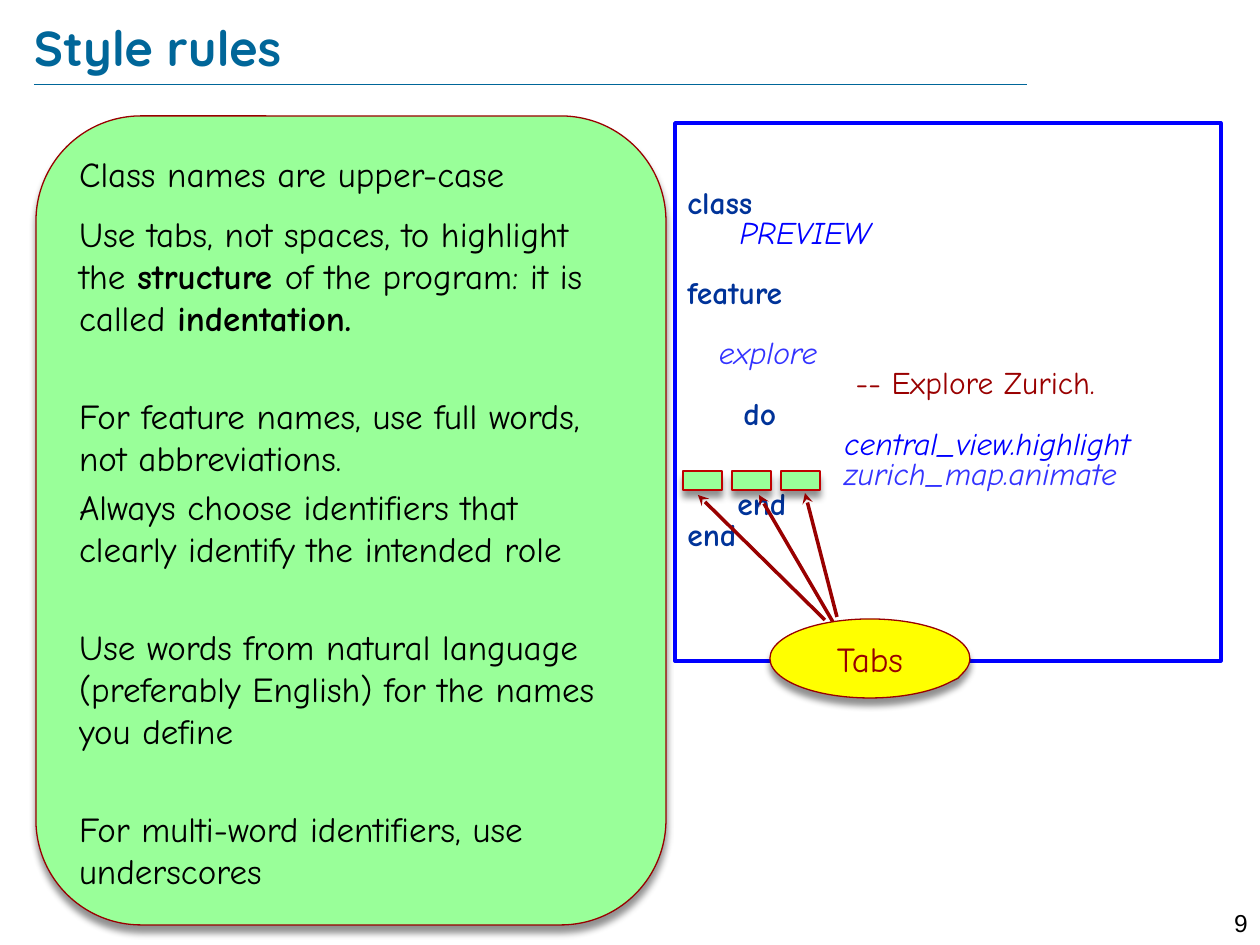
from lxml import etree
from pptx import Presentation
from pptx.dml.color import RGBColor
from pptx.enum.shapes import MSO_CONNECTOR, MSO_SHAPE
from pptx.enum.text import MSO_ANCHOR, PP_ALIGN
from pptx.oxml.ns import qn
from pptx.util import Pt

PX = 7257
LEFT, CENTER, RIGHT = PP_ALIGN.LEFT, PP_ALIGN.CENTER, PP_ALIGN.RIGHT
TOP, MIDDLE = MSO_ANCHOR.TOP, MSO_ANCHOR.MIDDLE
RECT, ROUND = MSO_SHAPE.RECTANGLE, MSO_SHAPE.ROUNDED_RECTANGLE
CALLOUT = MSO_SHAPE.OVAL_CALLOUT
STRAIGHT = MSO_CONNECTOR.STRAIGHT
THEME = {
    "title": "006699", "black": "000000", "green": "99FF99", "yellow": "FFFF00",
    "red": "990000", "tab_line": "C00000", "blue": "0000FF", "light_blue": "3333FF",
    "keyword": "003399", "head_font": "Quicksand", "body_font": "Comic Neue",
    "number_font": "Arial", "head_size": 28, "body_size": 20, "code_size": 18,
    "number_size": 14,
}


def add_text(p, text, font="body_font", size="body_size", color="black",
             bold=False, italic=False, align=LEFT):
    p.alignment = align
    r = p.add_run()
    r.text = text
    r.font.name = THEME[font]
    r.font.size = Pt(THEME[size])
    r.font.color.rgb = RGBColor.from_string(THEME[color])
    r.font.bold = bold
    r.font.italic = italic


def add_box(kind, box, fill, line, width):
    sp = s.shapes.add_shape(kind, *[v * PX for v in box])
    sp.line.color.rgb = RGBColor.from_string(THEME[line])
    sp.line.width = Pt(width)
    sp.shadow.inherit = False
    if fill is None:
        sp.fill.background()
        return sp
    sp.fill.solid()
    sp.fill.fore_color.rgb = RGBColor.from_string(THEME[fill])
    effects = sp._element.spPr.find(qn("a:effectLst"))
    shadow = etree.SubElement(effects, qn("a:outerShdw"), blurRad=str(Pt(4)),
                              dist=str(Pt(4)), dir="5400000", rotWithShape="0")
    clr = etree.SubElement(shadow, qn("a:srgbClr"), val=THEME["black"])
    etree.SubElement(clr, qn("a:alpha"), val="43000")
    return sp


prs = Presentation()
prs.slide_width, prs.slide_height = 1260 * PX, 945 * PX
s = prs.slides.add_slide(prs.slide_layouts[5])

title = s.shapes.title
title.left, title.top, title.width, title.height = [v * PX for v in (34, 16, 1095, 61)]
tf = title.text_frame
tf.margin_left = tf.margin_top = tf.margin_right = tf.margin_bottom = 0
tf.vertical_anchor = MIDDLE
add_text(tf.paragraphs[0], "Style rules", font="head_font", size="head_size",
         color="title", bold=True)

number = s.shapes.add_textbox(*[v * PX for v in (1191, 902, 69, 30)])
number.text_frame.word_wrap = True
add_text(number.text_frame.paragraphs[0], "9", font="number_font",
         size="number_size", align=RIGHT)

rules = [
    (0, [("Class names are upper-case", False)]),
    (10, [("Use tabs, not spaces, to highlight the ", False), ("structure ", True),
          ("of the program: it is called ", False), ("indentation.", True)]),
    (32, [("For feature names, use full words, not abbreviations.", False)]),
    (4, [("Always choose identifiers that clearly identify the intended role", False)]),
    (32, [("Use words from natural language (preferably English) for the names you define",
           False)]),
    (32, [("For multi-word identifiers, use underscores", False)]),
]
tf = add_box(ROUND, (36, 116, 630, 809), "green", "red", 0.75).text_frame
tf.word_wrap = True
tf.vertical_anchor = TOP
for i, (gap, runs) in enumerate(rules):
    p = tf.paragraphs[0] if i == 0 else tf.add_paragraph()
    if gap:
        p.space_before = Pt(gap)
    for text, bold in runs:
        add_text(p, text, bold=bold)

keyword = {"color": "keyword", "bold": True}
name = {"color": "blue", "italic": True}
light_name = {"color": "light_blue", "italic": True}
code = [
    (0, "class", keyword),
    (0, "     PREVIEW", name),
    (17, "feature", keyword),
    (17, "   explore", light_name),
    (0, "                -- Explore Zurich.", {"color": "red"}),
    (0, "     do", keyword),
    (0, "               central_view.highlight", name),
    (0, "               zurich_map.animate", light_name),
    (0, "\tend", keyword),
    (0, "end", keyword),
]
tf = add_box(RECT, (675, 123, 546, 538), None, "blue", 2).text_frame
tf.word_wrap = True
tf.vertical_anchor = TOP
tf.margin_top = 67 * PX
for i, (gap, text, style) in enumerate(code):
    p = tf.paragraphs[0] if i == 0 else tf.add_paragraph()
    p.line_spacing = 0.8
    if gap:
        p.space_before = Pt(gap)
    if text.startswith("\t"):
        tabs = etree.SubElement(p._p.get_or_add_pPr(), qn("a:tabLst"))
        etree.SubElement(tabs, qn("a:tab"), pos=str(50 * PX), algn="l")
    add_text(p, text, size="code_size", **style)

for i in range(3):
    add_box(RECT, (683 + 49 * i, 471, 39, 19), "green", "tab_line", 0.75)

lines = [
    ((34, 84, 1027, 84), "title", 0.25, False),
    ((825, 620, 698, 495), "red", 2, True),
    ((833, 622, 759, 495), "red", 2, True),
    ((837, 617, 805, 493), "red", 2, True),
]
for ends, color, width, arrow in lines:
    c = s.shapes.add_connector(STRAIGHT, *[v * PX for v in ends])
    c.line.color.rgb = RGBColor.from_string(THEME[color])
    c.line.width = Pt(width)
    if arrow:
        etree.SubElement(c.line._get_or_add_ln(), qn("a:tailEnd"), type="stealth")
    etree.SubElement(c._element.spPr, qn("a:effectLst"))

callout = add_box(CALLOUT, (770, 619, 200, 79), "yellow", "red", 0.75)
callout.adjustments[0], callout.adjustments[1] = 0.44, 0.25
tf = callout.text_frame
tf.vertical_anchor = MIDDLE
add_text(tf.paragraphs[0], "Tabs", color="red", align=CENTER)

prs.save("out.pptx")
